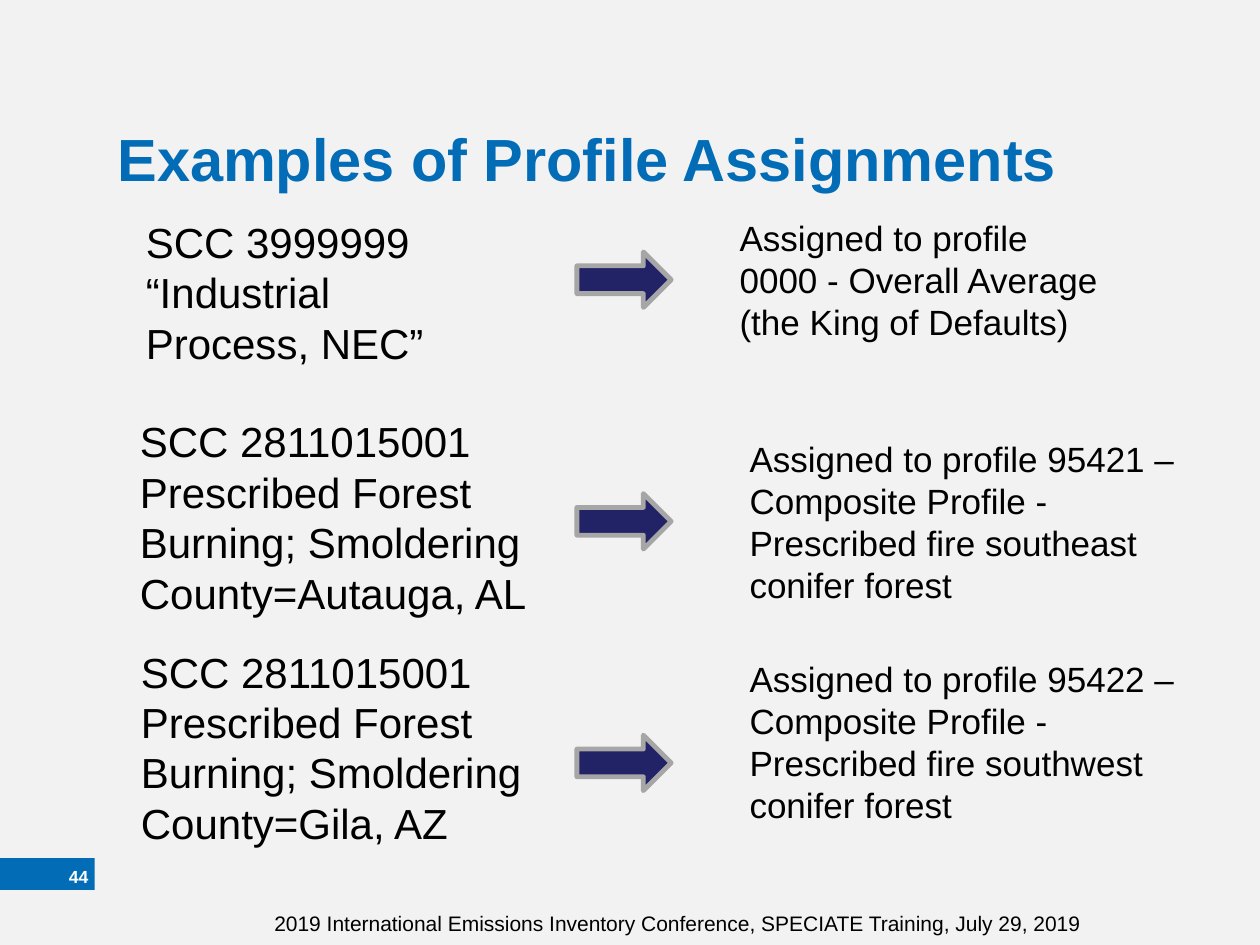
from dataclasses import dataclass
from typing import Optional

from pptx import Presentation
from pptx.dml.color import RGBColor
from pptx.enum.shapes import MSO_SHAPE as Preset
from pptx.enum.text import MSO_ANCHOR as Anchor, PP_ALIGN as Align
from pptx.slide import Slide
from pptx.util import Cm, Pt

COLORS = {
    "background": "F2F2F2",
    "accent": "026CB6",
    "arrow": "222267",
    "arrow_line": "A6A6A6",
    "text": "000000",
    "white": "FFFFFF",
}
FONT = "Arial"
INDENT = Cm(0.79)
ARROW_LEFT, ARROW_TOP, ARROW_STEP = 11.63, 5.08, 4.87


@dataclass(frozen=True)
class Box:
    left: float
    top: float
    width: float
    height: float


@dataclass(frozen=True)
class Label:
    box: Box
    lines: tuple[str, ...]
    size: float
    color: str = "text"
    bold: bool = False
    indented: bool = False
    align: Align = Align.LEFT
    anchor: Anchor = Anchor.TOP
    inset: Optional[float] = None


@dataclass(frozen=True)
class Assignment:
    source_box: Box
    source: tuple[str, ...]
    profile_box: Box
    profile: str


ASSIGNMENTS = (
    Assignment(
        Box(2.69, 4.24, 7.32, 9.32),
        ("SCC 3999999 “Industrial Process, NEC”",),
        Box(13.87, 4.24, 8.81, 1.96),
        "Assigned to profile 0000 - Overall Average (the King of Defaults)",
    ),
    Assignment(
        Box(2.57, 8.26, 8.74, 4.37),
        ("SCC 2811015001", "Prescribed Forest Burning; Smoldering", "County=Autauga, AL"),
        Box(14.07, 8.69, 10.72, 3.68),
        "Assigned to profile 95421 – Composite Profile - Prescribed fire southeast conifer forest",
    ),
    Assignment(
        Box(2.59, 12.9, 8.41, 4.37),
        ("SCC 2811015001", "Prescribed Forest Burning; Smoldering", "County=Gila, AZ"),
        Box(14.07, 13.13, 10.72, 3.68),
        "Assigned to profile 95422 – Composite Profile - Prescribed fire southwest conifer forest",
    ),
)
TITLE = Label(Box(2.12, 2.34, 21.16, 1.85), ("Examples of Profile Assignments",), 34, "accent", bold=True)
PAGE_NUMBER = Label(
    Box(0.08, 17.35, 1.7, 0.64), ("44",), 10, "white",
    bold=True, align=Align.RIGHT, anchor=Anchor.MIDDLE, inset=0,
)
FOOTER = Label(
    Box(5.28, 18.24, 17.15, 1.27),
    ("2019 International Emissions Inventory Conference, SPECIATE Training, July 29, 2019",), 12,
)


def place(box: Box) -> tuple[Cm, Cm, Cm, Cm]:
    """Return the position and size of a box as lengths."""
    return Cm(box.left), Cm(box.top), Cm(box.width), Cm(box.height)


def draw_shape(slide: Slide, preset: Preset, box: Box, fill: str, line: Optional[str] = None) -> None:
    """Draw a filled preset shape, outlined when a line colour is given."""
    shape = slide.shapes.add_shape(preset, *place(box))
    shape.shadow.inherit = False
    shape.fill.solid()
    shape.fill.fore_color.rgb = RGBColor.from_string(COLORS[fill])
    if line is None:
        shape.line.fill.background()
    else:
        shape.line.color.rgb = RGBColor.from_string(COLORS[line])
        shape.line.width = Pt(2.75)


def draw_label(slide: Slide, label: Label) -> None:
    """Draw a text box with one paragraph per line of the label."""
    frame = slide.shapes.add_textbox(*place(label.box)).text_frame
    frame.word_wrap = True
    frame.vertical_anchor = label.anchor
    if label.inset is not None:
        frame.margin_left = frame.margin_right = Cm(label.inset)
        frame.margin_top = frame.margin_bottom = Cm(label.inset)
    for index, line in enumerate(label.lines):
        paragraph = frame.add_paragraph() if index else frame.paragraphs[0]
        paragraph.alignment = label.align
        if label.indented:
            paragraph.level = 1
            properties = paragraph._p.get_or_add_pPr()
            properties.set("marL", str(INDENT))
            properties.set("indent", "0")
        run = paragraph.add_run()
        run.text = line
        run.font.name = FONT
        run.font.size = Pt(label.size)
        run.font.bold = label.bold
        run.font.color.rgb = RGBColor.from_string(COLORS[label.color])


def main() -> None:
    """Build the slide and save the presentation."""
    presentation = Presentation()
    presentation.slide_width, presentation.slide_height = Cm(25.4), Cm(19.05)
    slide = presentation.slides.add_slide(presentation.slide_layouts[6])
    draw_shape(slide, Preset.RECTANGLE, Box(0, 0, 25.4, 19.05), "background")
    draw_shape(slide, Preset.RECTANGLE, Box(0, 17.3, 1.91, 0.64), "accent")
    draw_label(slide, TITLE)
    for row, assignment in enumerate(ASSIGNMENTS):
        draw_label(slide, Label(assignment.source_box, assignment.source, 24))
        arrow_box = Box(ARROW_LEFT, ARROW_TOP + row * ARROW_STEP, 1.9, 1.12)
        draw_shape(slide, Preset.RIGHT_ARROW, arrow_box, "arrow", "arrow_line")
        draw_label(slide, Label(assignment.profile_box, (assignment.profile,), 20, indented=True))
    draw_label(slide, PAGE_NUMBER)
    draw_label(slide, FOOTER)
    presentation.save("out.pptx")


if __name__ == "__main__":
    main()
